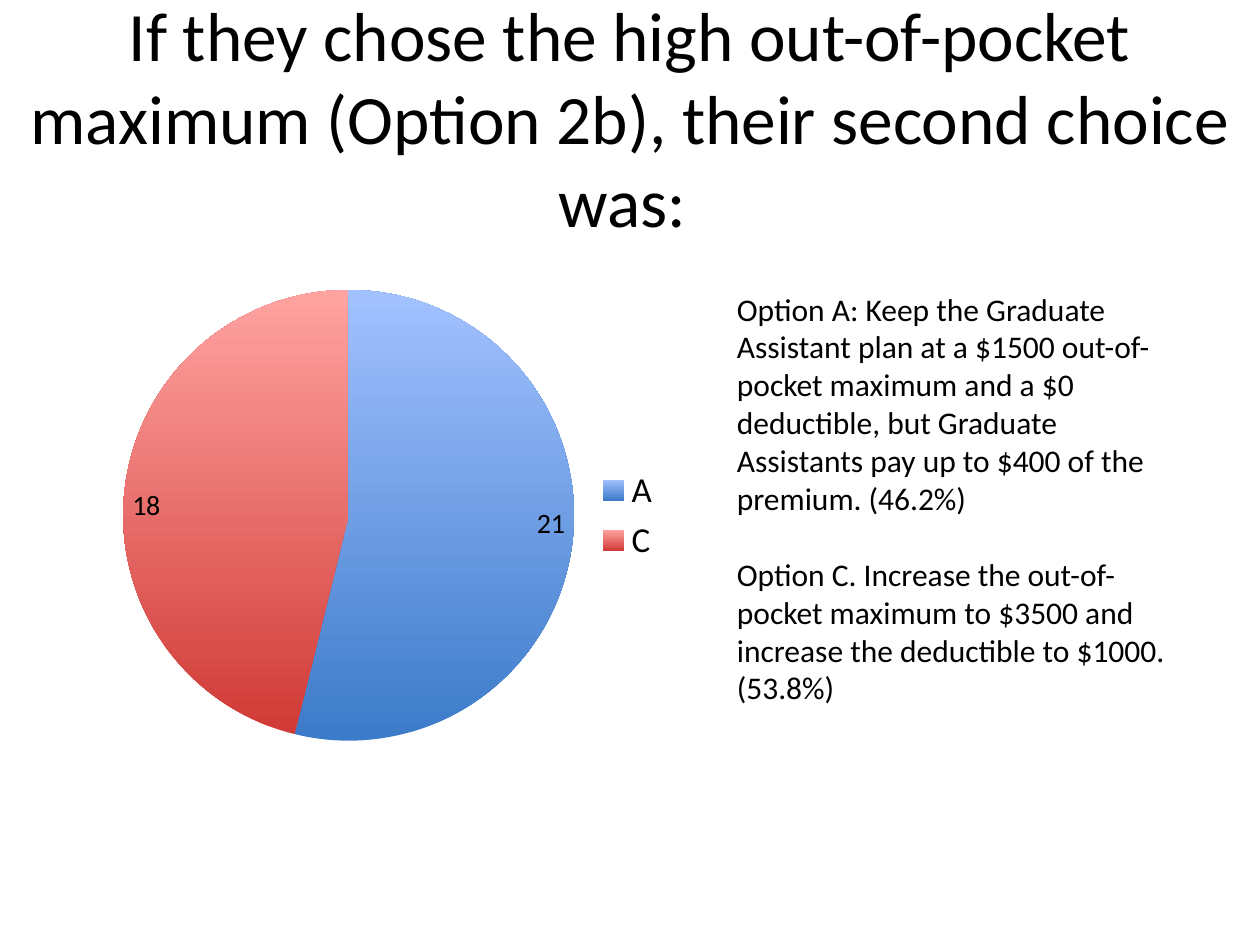
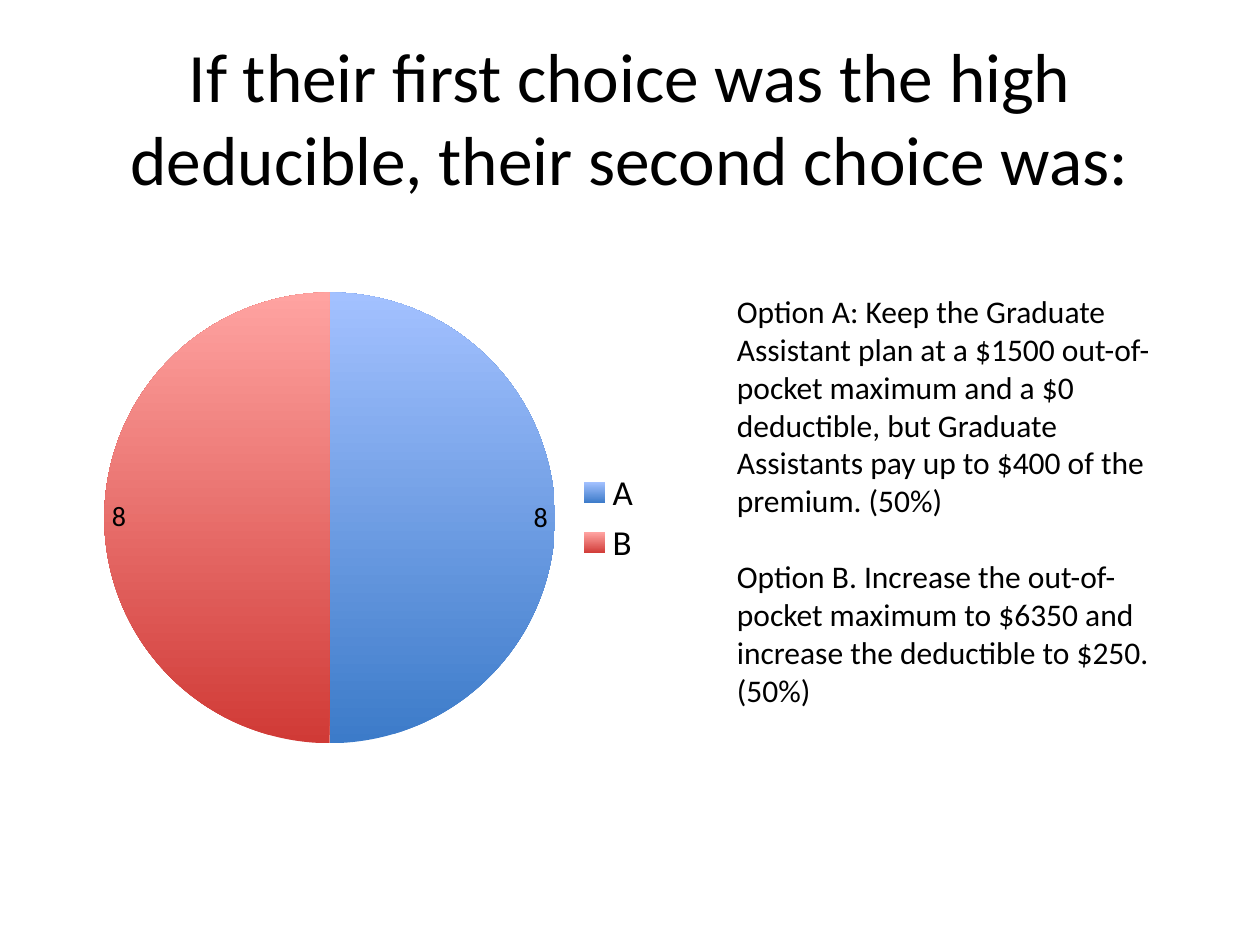
from pptx import Presentation
from pptx.chart.data import CategoryChartData as Data
from pptx.dml.color import RGBColor
from pptx.enum.chart import XL_CHART_TYPE as Kind, XL_LABEL_POSITION as Spot
from pptx.enum.chart import XL_LEGEND_POSITION as Side
from pptx.enum.text import MSO_ANCHOR as Anchor, MSO_AUTO_SIZE as Fit, PP_ALIGN as Align
from pptx.util import Inches, Pt

FACE = "Calibri"
INK = "000000"
# Each slice fades from a dark foot to a light top
FADES = [("3C7BC9", "A3C1FF"), ("D03A36", "FFA3A1")]
KEEP = ("Option A: Keep the Graduate Assistant plan at a $1500 out-of-pocket maximum "
        "and a $0 deductible, but Graduate Assistants pay up to $400 of the premium. ")

# Title, title margin, chart left, chart top, text top, votes, notes
slides = [
    ("If they chose the high out-of-pocket maximum (Option 2b), their second choice was: ",
     0, 0.84, 2.03, 2.25, {"A": 21, "C": 18},
     [KEEP + "(46.2%)",
      "Option C. Increase the out-of-pocket maximum to $3500 and "
      "increase the deductible to $1000. (53.8%)"]),
    ("If their first choice was the high deducible, their second choice was:",
     0.05, 0.69, 2.05, 2.27, {"A": 8, "B": 8},
     [KEEP + "(50%)",
      "Option B. Increase the out-of-pocket maximum to $6350 and "
      "increase the deductible to $250. (50%)"]),
]


def color(code):
    return RGBColor.from_string(code)


def style(font, size):
    font.name, font.size = FACE, Pt(size)
    font.color.rgb = color(INK)


deck = Presentation()
deck.slide_width, deck.slide_height = Inches(10), Inches(7.5)
wide, high = deck.slide_width, deck.slide_height

for head, edge, left, top, start, votes, notes in slides:
    slide = deck.slides.add_slide(deck.slide_layouts[5])

    title = slide.shapes.title
    title.left, title.top = int(wide * edge), int(high * 0.04)
    title.width, title.height = int(wide * (1 - 2 * edge)), Inches(1.25)
    frame = title.text_frame
    frame.word_wrap, frame.auto_size = True, Fit.NONE
    frame.vertical_anchor = Anchor.MIDDLE
    line = frame.paragraphs[0]
    line.alignment = Align.CENTER
    run = line.add_run()
    run.text = head
    style(run.font, 39.6)

    box = slide.shapes.add_textbox(int(wide * 0.575), Inches(start),
                                   int(wide * 0.375), Inches(3.43))
    frame = box.text_frame
    frame.word_wrap = True
    for i, note in enumerate(notes):
        line = frame.add_paragraph() if i else frame.paragraphs[0]
        line.space_before = Pt(22 * i)
        run = line.add_run()
        run.text = note
        style(run.font, 18)

    data = Data()
    data.categories = list(votes)
    data.add_series("Series 1", list(votes.values()))
    chart = slide.shapes.add_chart(Kind.PIE, Inches(left), Inches(top),
                                   Inches(4.51), Inches(4.12), data).chart
    chart.has_title = False
    style(chart.font, 10)
    chart.has_legend = True
    legend = chart.legend
    legend.position, legend.include_in_layout = Side.RIGHT, False
    style(legend.font, 20)

    pie = chart.plots[0]
    pie.vary_by_categories = True
    pie.has_data_labels = True
    labels = pie.data_labels
    labels.show_value, labels.show_percentage = True, False
    labels.position = Spot.INSIDE_END
    style(labels.font, 16)
    for i, fade in enumerate(FADES):
        part = pie.series[0].points[i].format
        part.line.fill.background()
        part.fill.gradient()
        part.fill.gradient_angle = 90
        for stop, code in zip(part.fill.gradient_stops, fade):
            stop.color.rgb = color(code)

deck.save("out.pptx")
